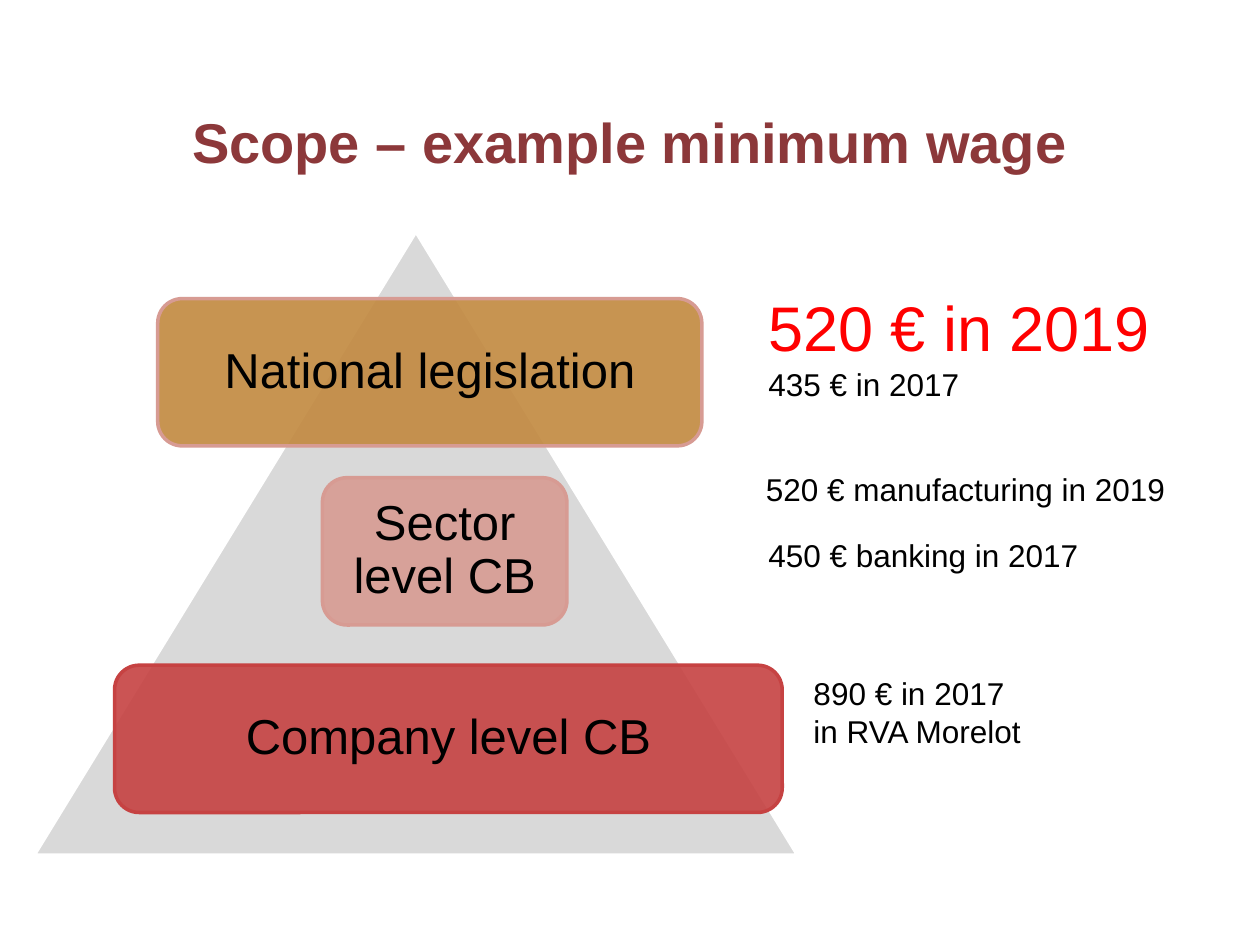
"""Build the minimum wage slide: a pyramid of bargaining levels with example amounts."""
from dataclasses import dataclass

from lxml import etree
from pptx import Presentation
from pptx import util as u
from pptx.dml.color import RGBColor
from pptx.enum import shapes, text
from pptx.oxml.ns import qn

BLACK = RGBColor(0x00, 0x00, 0x00)
WHITE = RGBColor(0xFF, 0xFF, 0xFF)
RED = RGBColor(0xFF, 0x00, 0x00)
MAROON = RGBColor(0x8C, 0x38, 0x3A)
GREY = RGBColor(0xD9, 0xD9, 0xD9)
OCHRE = RGBColor(0xC2, 0x89, 0x3F)
ROSE = RGBColor(0xD7, 0x9B, 0x93)
CRIMSON = RGBColor(0xC6, 0x42, 0x42)

FONT = "Arial"
LEVEL_HEIGHT = 2.97
LEVEL_INSET = 0.3
LEVEL_OPACITY = 90


@dataclass(frozen=True)
class Level:
    label: str
    left: float
    top: float
    width: float
    fill: RGBColor
    line: RGBColor


@dataclass(frozen=True)
class Note:
    lines: tuple[str, ...]
    left: float
    top: float
    width: float
    height: float = 1.02
    size: int = 18
    color: RGBColor = BLACK


LEVELS = (
    Level("National legislation", 3.18, 6.02, 10.97, OCHRE, ROSE),
    Level("Sector level CB", 6.5, 9.63, 4.93, ROSE, ROSE),
    Level("Company level CB", 2.31, 13.41, 13.46, CRIMSON, CRIMSON),
)

NOTES = (
    Note(("520 € in 2019",), 15.24, 5.69, 8.28, 1.8, 36, RED),
    Note(("435 € in 2017",), 15.24, 7.24, 4.39),
    Note(("520 € manufacturing in 2019",), 15.19, 9.35, 8.64),
    Note(("450 € banking in 2017",), 15.24, 10.69, 6.81),
    Note(("890 € in 2017", "in RVA Morelot"), 16.15, 13.46, 5, 1.8),
)


def apply(target, values: dict) -> None:
    """Set each named attribute on the target."""
    for name, value in values.items():
        setattr(target, name, value)


def write(p, content: str, size: int, color: RGBColor, bold: bool = False) -> None:
    """Add one formatted run to a paragraph."""
    r = p.add_run()
    r.text = content
    apply(r.font, {"name": FONT, "size": u.Pt(size), "bold": bold})
    r.font.color.rgb = color


def add_block(s, kind, box: tuple, fill: RGBColor, line: RGBColor):
    """Add a filled, outlined shape without shadow."""
    sp = s.shapes.add_shape(kind, *map(u.Cm, box))
    sp.shadow.inherit = False
    sp.fill.solid()
    sp.fill.fore_color.rgb = fill
    sp.line.color.rgb = line
    sp.line.width = u.Pt(2)
    return sp


def set_opacity(sp, percent: int) -> None:
    """Make the solid fill of a shape partly transparent."""
    color = sp._element.spPr.find(qn("a:solidFill")).find(qn("a:srgbClr"))
    etree.SubElement(color, qn("a:alpha")).set("val", str(percent * 1000))


def add_title(s, content: str) -> None:
    """Add the centred slide title."""
    tf = s.shapes.add_textbox(*map(u.Cm, (1.27, 1.73, 22.86, 2.21))).text_frame
    apply(tf, {"word_wrap": True, "vertical_anchor": text.MSO_ANCHOR.MIDDLE})
    p = tf.paragraphs[0]
    p.alignment = text.PP_ALIGN.CENTER
    write(p, content, 32, MAROON, bold=True)


def add_level(s, level: Level) -> None:
    """Add one labelled level of the pyramid."""
    box = (level.left, level.top, level.width, LEVEL_HEIGHT)
    sp = add_block(s, shapes.MSO_SHAPE.ROUNDED_RECTANGLE, box, level.fill, level.line)
    set_opacity(sp, LEVEL_OPACITY)
    tf = sp.text_frame
    apply(tf, {"word_wrap": True, "vertical_anchor": text.MSO_ANCHOR.MIDDLE})
    sides = ("left", "top", "right", "bottom")
    apply(tf, {f"margin_{side}": u.Cm(LEVEL_INSET) for side in sides})
    p = tf.paragraphs[0]
    apply(p, {"alignment": text.PP_ALIGN.CENTER, "line_spacing": 0.9})
    write(p, level.label, 28, BLACK)


def add_note(s, note: Note) -> None:
    """Add one example amount beside the pyramid."""
    box = (note.left, note.top, note.width, note.height)
    tf = s.shapes.add_textbox(*map(u.Cm, box)).text_frame
    apply(tf, {"word_wrap": False, "auto_size": text.MSO_AUTO_SIZE.SHAPE_TO_FIT_TEXT})
    for i, line in enumerate(note.lines):
        p = tf.add_paragraph() if i else tf.paragraphs[0]
        write(p, line, note.size, note.color)


def main() -> None:
    """Compose and save the slide."""
    prs = Presentation()
    apply(prs, {"slide_width": u.Cm(25.4), "slide_height": u.Cm(19.05)})
    s = prs.slides.add_slide(prs.slide_layouts[6])
    add_title(s, "Scope – example minimum wage")
    pyramid = (0.69, 4.67, 15.39, 12.57)
    add_block(s, shapes.MSO_SHAPE.ISOSCELES_TRIANGLE, pyramid, GREY, WHITE)
    for level in LEVELS:
        add_level(s, level)
    for note in NOTES:
        add_note(s, note)
    prs.save("out.pptx")


if __name__ == "__main__":
    main()
